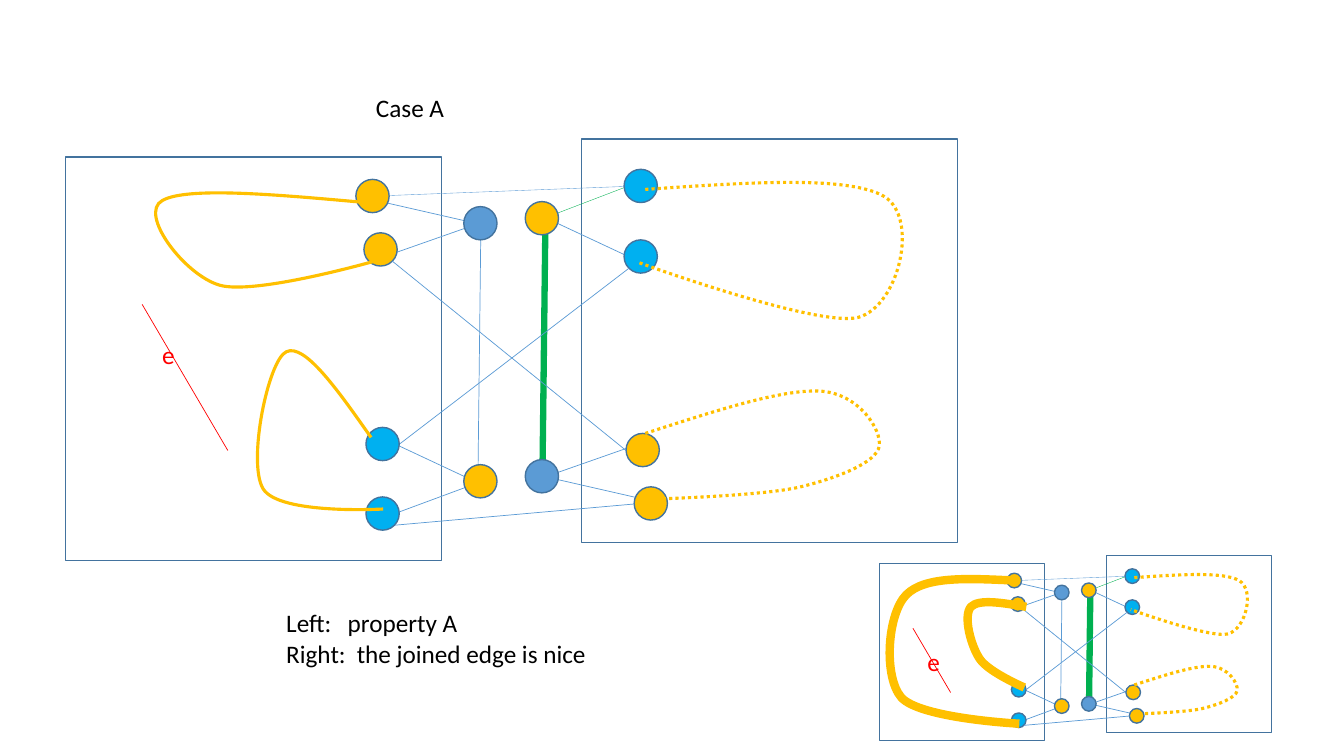
import pptx
import pptx.dml.color
import pptx.enum.dml
import pptx.enum.shapes
import pptx.enum.text
import pptx.oxml
import pptx.oxml.ns
import pptx.util
from pptx.util import Inches

BLUE, CYAN, GOLD = "5B9BD5", "00B0F0", "FFC000"
GREEN, RED, OUTLINE, BLACK = "00B050", "FF0000", "43739E", "000000"
DOTTED = pptx.enum.dml.MSO_LINE.ROUND_DOT
DRAWING = pptx.oxml.ns.nsdecls("a")
NODE_SIZE = 0.33
HALF_SIZE = (3.73, 4)
LEFT_CORNER = (0.65, 1.56)

# Edges: start, end, colour, width in points. Nodes: left, top, fill.
LEFT_EDGES = [
    ((4.77, 2.22), (4.74, 4.79), BLUE, 0.5),
    ((4.74, 2.22), (3.69, 1.98), BLUE, 0.5),
    ((4.74, 2.22), (3.8, 2.55), BLUE, 0.5),
    ((4.74, 4.79), (3.8, 4.35), BLUE, 0.5),
    ((4.74, 4.79), (3.93, 5.09), BLUE, 0.5),
]
LEFT_NODES = [(4.6, 2.05, BLUE), (4.6, 4.61, GOLD), (3.63, 4.93, CYAN),
              (3.63, 4.24, CYAN), (3.61, 2.31, GOLD), (3.53, 1.78, GOLD)]
RIGHT_EDGES = [
    ((5.38, 4.73), (5.41, 2.16), GREEN, 4.5),
    ((5.41, 4.73), (6.46, 4.97), BLUE, 0.5),
    ((5.41, 4.73), (6.35, 4.4), BLUE, 0.5),
    ((5.41, 2.16), (6.35, 2.6), BLUE, 0.5),
    ((5.41, 2.16), (6.22, 1.85), GREEN, 0.25),
]
RIGHT_NODES = [(5.21, 4.56, BLUE), (5.21, 2, GOLD), (6.19, 1.68, CYAN),
               (6.19, 2.38, CYAN), (6.21, 4.3, GOLD), (6.29, 4.83, GOLD)]
HALVES = [(LEFT_CORNER, LEFT_EDGES, LEFT_NODES),
          ((5.77, 1.38), RIGHT_EDGES, RIGHT_NODES)]
CROSSING_EDGES = [
    ((3.86, 1.94), (6.19, 1.85), BLUE, 0.25),
    ((3.89, 2.59), (6.21, 4.47), BLUE, 0.5),
    ((3.97, 4.4), (6.24, 2.66), BLUE, 0.5),
    ((3.92, 5.21), (6.29, 5), BLUE, 0.5),
    ((1.41, 3.02), (2.26, 4.47), RED, 0.5),
]

# Paths: a start point, then two control points and an end point per curve.
SEPARATE_PATHS = [
    [(3.63, 2.01), (2.74, 1.93), (1.85, 1.85), (1.61, 1.99), (1.37, 2.12),
     (1.83, 2.73), (2.18, 2.83), (2.53, 2.93), (3.72, 2.59), (3.72, 2.59)],
    [(3.68, 4.34), (3.35, 3.87), (3.02, 3.4), (2.84, 3.49), (2.66, 3.57),
     (2.45, 4.59), (2.61, 4.85), (2.77, 5.11), (3.8, 5.05), (3.8, 5.05)],
]
DOTTED_PATHS = [
    [(6.4, 1.88), (7.41, 1.81), (8.42, 1.74), (8.77, 1.95), (9.12, 2.16),
     (8.92, 3.04), (8.51, 3.15), (8.1, 3.25), (6.32, 2.6), (6.32, 2.6)],
    [(6.4, 4.3), (7.08, 4.08), (7.75, 3.86), (8.13, 3.88), (8.52, 3.9),
     (8.75, 4.27), (8.72, 4.43), (8.69, 4.59), (8.31, 4.74), (7.94, 4.83),
     (7.57, 4.92), (6.51, 4.95), (6.51, 4.95)],
]
NESTED_PATHS = [
    [(10.07, 5.76), (9.62, 5.74), (9.18, 5.71), (8.99, 5.9), (8.8, 6.09),
     (8.76, 6.71), (8.94, 6.92), (9.13, 7.13), (10.11, 7.18), (10.11, 7.18)],
    [(10.18, 6.02), (9.94, 5.98), (9.71, 5.94), (9.63, 6.02), (9.55, 6.11),
     (9.63, 6.41), (9.72, 6.54), (9.81, 6.67), (10.16, 6.82), (10.16, 6.82)],
]


def rgb(color):
    return pptx.dml.color.RGBColor.from_string(color)


def style_line(line, color, width, dash=None):
    line.color.rgb = rgb(color)
    formats = {"width": pptx.util.Pt(width), "dash_style": dash}
    for name, value in formats.items():
        setattr(line, name, value)


def style_shape(shape, fill, *line_format):
    shape.shadow.inherit = False
    if fill:
        shape.fill.solid()
        shape.fill.fore_color.rgb = rgb(fill)
    else:
        shape.fill.background()
    style_line(shape.line, *line_format)


def add_outlined(shapes, kind, position, size, fill=None):
    shape = shapes.add_shape(kind, *map(Inches, (*position, *size)))
    style_shape(shape, fill, OUTLINE, 1)


def add_edge(shapes, start, end, color, width):
    edge = shapes.add_connector(pptx.enum.shapes.MSO_CONNECTOR.STRAIGHT,
                                *map(Inches, (*start, *end)))
    style_line(edge.line, color, width)
    edge._element.spPr.append(pptx.oxml.parse_xml(f"<a:effectLst {DRAWING}/>"))


def axis_range(values):
    """Return the least and greatest value a Bezier path takes on one axis."""
    reached = []
    for first in range(0, len(values) - 1, 3):
        a, b, c, d = values[first:first + 4]
        for t in (step / 20 for step in range(21)):
            u = 1 - t
            reached.append(a * u**3 + 3 * b * u*u*t + 3 * c * u*t*t + d * t**3)
    return min(reached), max(reached)


def add_curve(shapes, points, width, dash=None):
    """Size a freeform to its path, then give it true Bezier segments."""
    points = [tuple(map(Inches, point)) for point in points]
    corners = list(zip(*map(axis_range, zip(*points))))
    builder = shapes.build_freeform(*points[0])
    builder.add_line_segments(corners, close=False)
    shape = builder.convert_to_shape()
    (left, top), _ = corners
    outline = shape._element.find(".//" + pptx.oxml.ns.qn("a:path"))
    for segment in outline.findall(pptx.oxml.ns.qn("a:lnTo")):
        outline.remove(segment)
    for first in range(1, len(points), 3):
        marks = "".join(f'<a:pt x="{round(x - left)}" y="{round(y - top)}"/>'
                        for x, y in points[first:first + 3])
        outline.append(pptx.oxml.parse_xml(
            f"<a:cubicBezTo {DRAWING}>{marks}</a:cubicBezTo>"))
    style_shape(shape, None, GOLD, width, dash)


def add_text(shapes, position, size, lines, color=BLACK, wrap=False):
    box = shapes.add_textbox(*map(Inches, (*position, *size)))
    frame = box.text_frame
    frame.word_wrap = wrap
    frame.auto_size = pptx.enum.text.MSO_AUTO_SIZE.SHAPE_TO_FIT_TEXT
    font_format = {"name": "Calibri", "size": pptx.util.Pt(18)}
    for number, line in enumerate(lines):
        para = frame.add_paragraph() if number else frame.paragraphs[0]
        span = para.add_run()
        span.text = line
        span.font.color.rgb = rgb(color)
        for name, value in font_format.items():
            setattr(span.font, name, value)
    return frame


def add_tab_stop(para, position):
    para._p.get_or_add_pPr().append(pptx.oxml.parse_xml(
        f'<a:tabLst {DRAWING}><a:tab pos="{Inches(position)}" algn="l"/>'
        "</a:tabLst>"))


def add_graph(page, corner, scale, solid_paths):
    """Draw both halves, with the left half's corner moved to corner."""
    shapes = page.shapes.add_group_shape().shapes
    kinds = pptx.enum.shapes.MSO_SHAPE

    def place(point):
        return tuple(new + (value - old) * scale
                     for new, value, old in zip(corner, point, LEFT_CORNER))

    def resize(*lengths):
        return tuple(length * scale for length in lengths)

    def add_edges(edges):
        for start, end, *line_format in edges:
            add_edge(shapes, place(start), place(end), *line_format)

    for position, edges, nodes in HALVES:
        add_outlined(shapes, kinds.RECTANGLE, place(position), resize(*HALF_SIZE))
        add_edges(edges)
        for *spot, fill in nodes:
            add_outlined(shapes, kinds.OVAL, place(spot),
                         resize(NODE_SIZE, NODE_SIZE), fill)
    add_edges(CROSSING_EDGES)
    add_text(shapes, place((1.51, 3.32)), resize(0.74, 0.91), ["e"], RED)
    for paths, dash in ((solid_paths, None), (DOTTED_PATHS, DOTTED)):
        for points in paths:
            add_curve(shapes, [place(point) for point in points], 2.25, dash)


def main():
    deck = pptx.Presentation()
    deck.slide_width, deck.slide_height = Inches(13.33), Inches(7.5)
    page = deck.slides.add_slide(deck.slide_layouts[6])
    add_graph(page, LEFT_CORNER, 1, SEPARATE_PATHS)
    lines = ["Left:\tproperty A", "Right:\tthe joined edge is nice"]
    caption = add_text(page.shapes, (2.74, 5.98), (6.89, 0.71), lines, wrap=True)
    for para, position in zip(caption.paragraphs, (0.61, 0.7)):
        add_tab_stop(para, position)
    add_text(page.shapes, (3.63, 0.87), (0.89, 0.4), ["Case A"])
    add_graph(page, (8.72, 5.59), 0.44, [])
    for points in NESTED_PATHS:
        add_curve(page.shapes, points, 6)
    deck.save("out.pptx")


if __name__ == "__main__":
    main()
